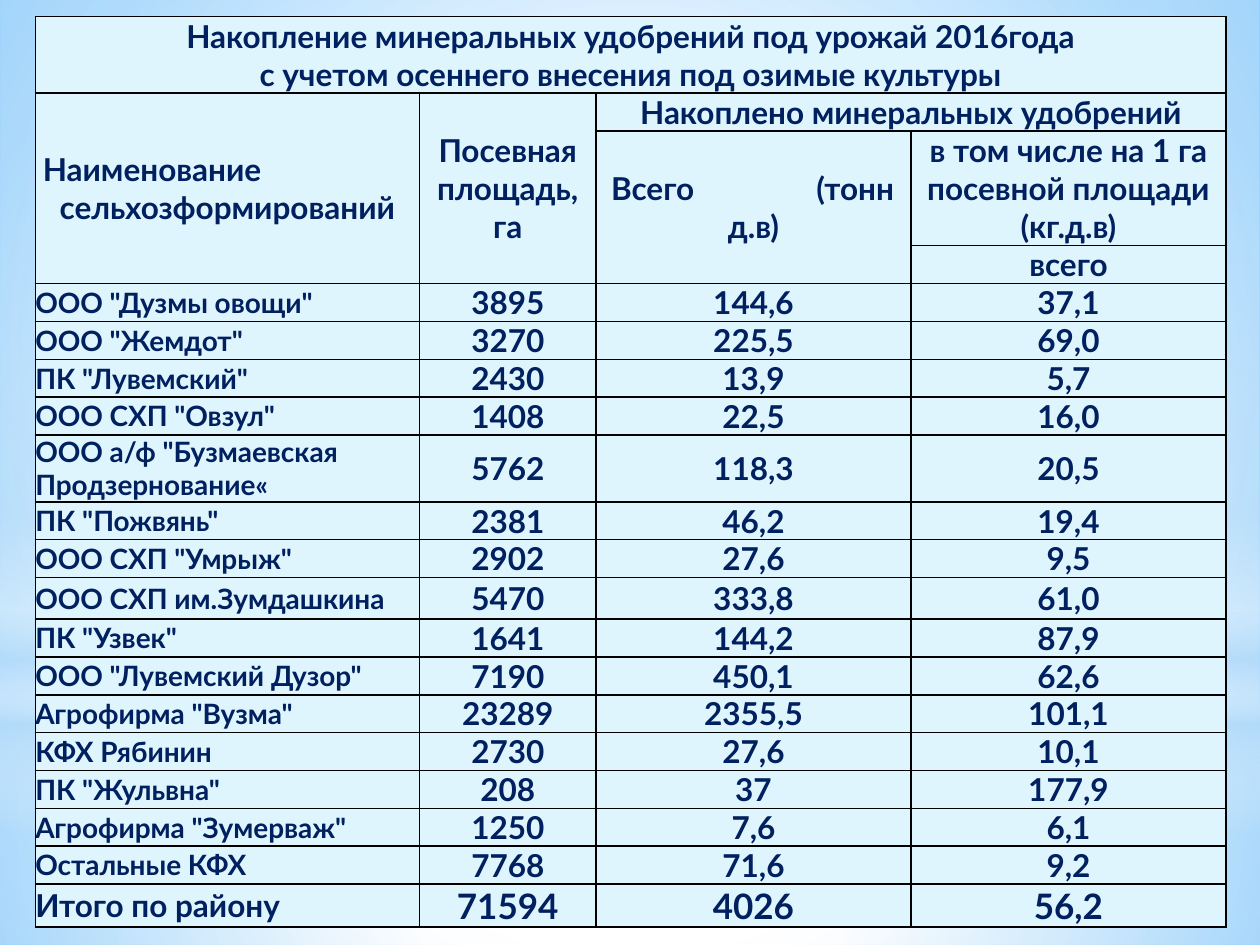
from dataclasses import dataclass
from typing import Any, NamedTuple, Optional

from lxml import etree
from pptx import Presentation
from pptx.dml.color import RGBColor
from pptx.enum.shapes import MSO_SHAPE
from pptx.enum.text import MSO_ANCHOR, PP_ALIGN
from pptx.oxml import parse_xml
from pptx.oxml.ns import nsdecls, qn
from pptx.util import Inches, Pt

RECT, OVAL = MSO_SHAPE.RECTANGLE, MSO_SHAPE.OVAL
LEFT, CENTER = PP_ALIGN.LEFT, PP_ALIGN.CENTER
MIDDLE, BOTTOM = MSO_ANCHOR.MIDDLE, MSO_ANCHOR.BOTTOM
COLORS = {"text": "002060", "cell": "DFF5FD", "border": "000000",
          "white": "FFFFFF", "haze": "B4DCFA", "sky": "63BCFF"}
FONT = {"name": "Lato", "bold": True}
CELL = {"margin_left": 0, "margin_right": 0, "margin_top": 0, "margin_bottom": 0}
PLAIN_TABLE = {"first_row": False, "horz_banding": False}
COLUMNS = (3.05, 1.4, 2.5, 2.5)
HEADER_ROWS = (0.61, 0.3, 0.91, 0.3)


class Stop(NamedTuple):
    pos: int
    color: str
    alpha: int = 100


@dataclass
class Gradient:
    stops: tuple[Stop, ...]
    center: Optional[tuple[int, int, int, int]] = (50, 50, 50, 50)


@dataclass
class Glow:
    kind: Any
    top: float
    height: float
    gradient: Gradient


@dataclass
class Line:
    text: str
    align: Any = CENTER
    tabs: tuple[float, ...] = ()
    indent: float = 0


@dataclass
class Header:
    first: tuple[int, int]
    last: tuple[int, int]
    lines: tuple[Line, ...]
    anchor: Any = MIDDLE


@dataclass
class Farm:
    name: str
    values: tuple[str, str, str]
    height: float = 0.3
    name_size: int = 16
    value_size: int = 18


SKY = Gradient((Stop(0, "white"), Stop(42, "white"), Stop(100, "sky")), (24, 44, 24, 12))
GLOWS = (
    Glow(RECT, 5.58, 1.92, Gradient(
        (Stop(0, "white", 91), Stop(37, "white", 76), Stop(100, "haze", 79)))),
    Glow(RECT, 0, 5.58, Gradient(
        (Stop(0, "white", 89), Stop(48, "white", 62), Stop(100, "haze", 79)))),
    Glow(RECT, 4.12, 2.5, Gradient(
        (Stop(0, "white", 0), Stop(29, "white", 30), Stop(45, "haze", 40),
         Stop(55, "white", 26), Stop(65, "haze", 60), Stop(100, "white", 0)), None)),
    Glow(OVAL, 1.75, 5.58, Gradient((Stop(0, "white"), Stop(56, "white", 0)))),
)
HEADERS = (
    Header((0, 0), (0, 3), (Line("Накопление минеральных удобрений под урожай 2016года"),
                            Line("с учетом осеннего внесения под озимые культуры")), BOTTOM),
    Header((1, 0), (3, 0), (Line("Наименование", LEFT, indent=0.06),
                            Line("сельхозформирований"))),
    Header((1, 1), (3, 1), (Line("Посевная площадь, га"),)),
    Header((1, 2), (1, 3), (Line("Накоплено минеральных удобрений"),)),
    Header((2, 2), (3, 2), (Line("\tВсего\t(тонн", LEFT, (0.12, 1.75)), Line("д.в)"))),
    Header((2, 3), (2, 3), (Line("в том числе на 1 га посевной площади (кг.д.в)"),)),
    Header((3, 3), (3, 3), (Line("всего"),)),
)
FARMS = (
    Farm('ООО "Дузмы овощи"', ("3895", "144,6", "37,1")),
    Farm('ООО "Жемдот"', ("3270", "225,5", "69,0")),
    Farm('ПК "Лувемский"', ("2430", "13,9", "5,7")),
    Farm('ООО СХП "Овзул"', ("1408", "22,5", "16,0")),
    Farm('ООО а/ф "Бузмаевская Продзернование«', ("5762", "118,3", "20,5"), 0.53),
    Farm('ПК "Пожвянь"', ("2381", "46,2", "19,4")),
    Farm('ООО СХП "Умрыж"', ("2902", "27,6", "9,5")),
    Farm("ООО СХП им.Зумдашкина", ("5470", "333,8", "61,0"), 0.33),
    Farm('ПК "Узвек"', ("1641", "144,2", "87,9")),
    Farm('ООО "Лувемский Дузор"', ("7190", "450,1", "62,6")),
    Farm('Агрофирма "Вузма"', ("23289", "2355,5", "101,1")),
    Farm("КФХ Рябинин", ("2730", "27,6", "10,1")),
    Farm('ПК "Жульвна"', ("208", "37", "177,9")),
    Farm('Агрофирма "Зумерваж"', ("1250", "7,6", "6,1")),
    Farm("Остальные КФХ", ("7768", "71,6", "9,2")),
    Farm("Итого по району", ("71594", "4026", "56,2"), 0.34, 18, 20),
)


def apply(obj: Any, values: dict[str, Any]) -> None:
    """Set each named attribute on an object."""
    for name, value in values.items():
        setattr(obj, name, value)


def set_gradient(fill: Any, owner: Any, gradient: Gradient) -> None:
    """Give a fill its own gradient stops and direction."""
    fill.gradient()
    old = owner.xpath(".//a:gradFill")[0]
    stops = "".join(
        f'<a:gs pos="{s.pos * 1000}"><a:srgbClr val="{COLORS[s.color]}">'
        f'<a:alpha val="{s.alpha * 1000}"/></a:srgbClr></a:gs>' for s in gradient.stops)
    shade = '<a:lin ang="5400000" scaled="0"/>'
    if gradient.center:
        sides = " ".join(f'{k}="{v * 1000}"' for k, v in zip("ltrb", gradient.center))
        shade = f'<a:path path="circle"><a:fillToRect {sides}/></a:path>'
    old.getparent().replace(old, parse_xml(
        f'<a:gradFill {nsdecls("a")} rotWithShape="1"><a:gsLst>{stops}</a:gsLst>'
        f'{shade}</a:gradFill>'))


def add_glow(slide: Any, glow: Glow) -> None:
    """Draw one soft full-width band of the background."""
    sp = slide.shapes.add_shape(glow.kind, 0, Inches(glow.top), Inches(10), Inches(glow.height))
    sp.shadow.inherit = False
    sp.line.fill.background()
    set_gradient(sp.fill, sp._element.spPr, glow.gradient)


def style_cell(cell: Any) -> None:
    """Give a cell its fill, margins and four borders."""
    apply(cell, CELL)
    cell.fill.solid()
    cell.fill.fore_color.rgb = RGBColor.from_string(COLORS["cell"])
    tc_pr = cell._tc.get_or_add_tcPr()
    for i, side in enumerate("LRTB"):
        tc_pr.insert(i, parse_xml(
            f'<a:ln{side} {nsdecls("a")} w="{Pt(1)}"><a:solidFill>'
            f'<a:srgbClr val="{COLORS["border"]}"/></a:solidFill></a:ln{side}>'))


def write_cell(cell: Any, lines: tuple[Line, ...], size: int = 18, anchor: Any = MIDDLE) -> None:
    """Write one paragraph per line into a cell."""
    cell.vertical_anchor = anchor
    tf = cell.text_frame
    for i, line in enumerate(lines):
        p = tf.paragraphs[0] if i == 0 else tf.add_paragraph()
        p.alignment = line.align
        p_pr = p._p.get_or_add_pPr()
        if line.indent:
            p_pr.set("marL", str(Inches(line.indent)))
        if line.tabs:
            tabs = etree.SubElement(p_pr, qn("a:tabLst"))
            for pos in line.tabs:
                etree.SubElement(tabs, qn("a:tab"), pos=str(Inches(pos)), algn="l")
        r = p.add_run()
        r.text = line.text
        apply(r.font, FONT | {"size": Pt(size)})
        r.font.color.rgb = RGBColor.from_string(COLORS["text"])


def add_fertilizer_table(slide: Any) -> None:
    """Build the table of fertilizer stocks by farm."""
    heights = HEADER_ROWS + tuple(farm.height for farm in FARMS)
    table = slide.shapes.add_table(
        len(heights), len(COLUMNS), Inches(0.28), Inches(0.13),
        Inches(sum(COLUMNS)), Inches(sum(heights))).table
    apply(table, PLAIN_TABLE)
    for column, width in zip(table.columns, COLUMNS):
        column.width = Inches(width)
    for row, height in zip(table.rows, heights):
        row.height = Inches(height)
    for cell in table.iter_cells():
        style_cell(cell)
    for header in HEADERS:
        cell = table.cell(*header.first)
        if header.first != header.last:
            cell.merge(table.cell(*header.last))
        write_cell(cell, header.lines, anchor=header.anchor)
    for row, farm in enumerate(FARMS, len(HEADER_ROWS)):
        write_cell(table.cell(row, 0), (Line(farm.name, LEFT),), farm.name_size)
        for col, value in enumerate(farm.values, 1):
            write_cell(table.cell(row, col), (Line(value),), farm.value_size)


def main() -> None:
    """Build and save the slide."""
    prs = Presentation()
    apply(prs, {"slide_width": Inches(10), "slide_height": Inches(7.5)})
    s = prs.slides.add_slide(prs.slide_layouts[6])
    set_gradient(s.background.fill, s._element, SKY)
    for glow in GLOWS:
        add_glow(s, glow)
    add_fertilizer_table(s)
    prs.save("out.pptx")


if __name__ == "__main__":
    main()
